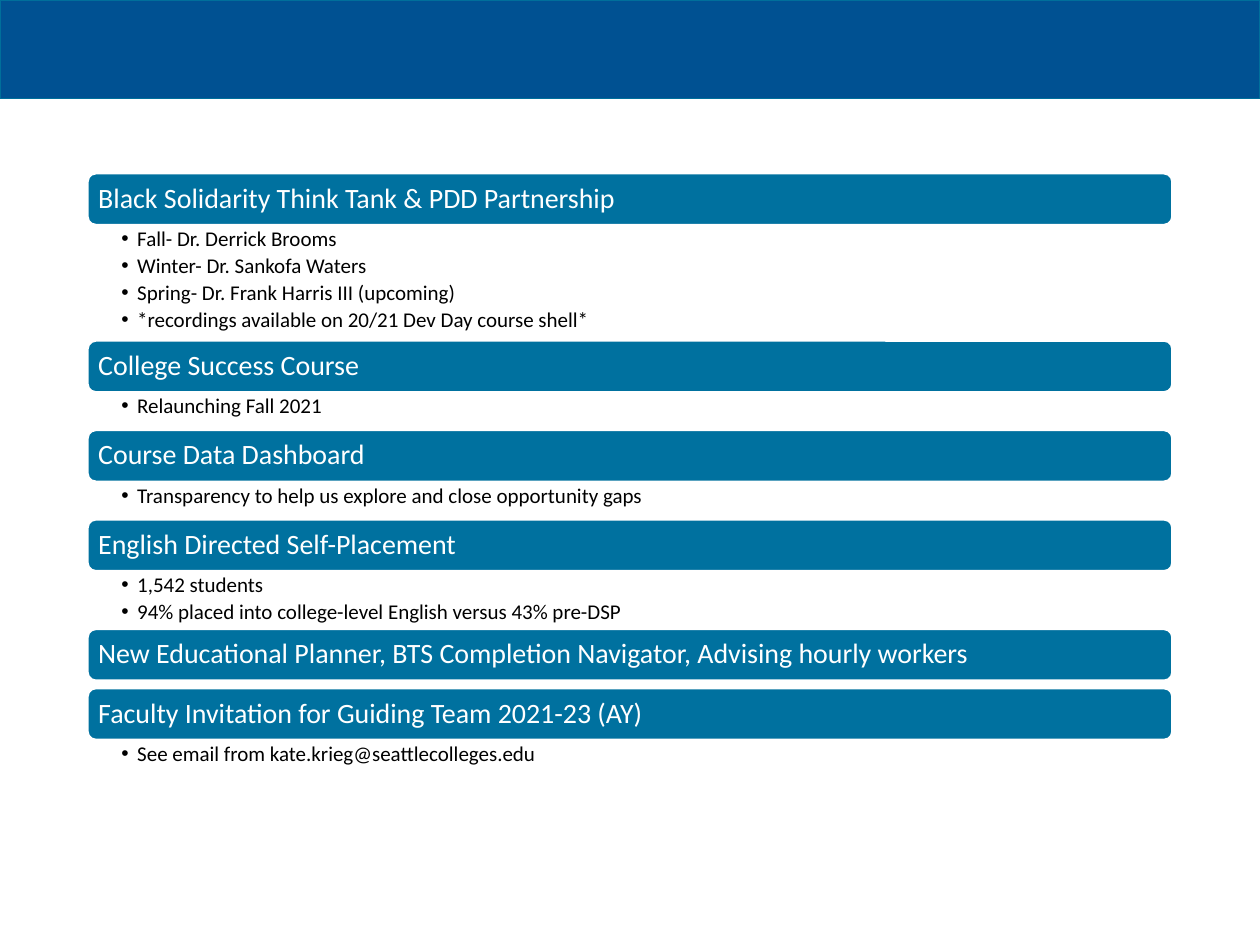
"""Build a slide of college initiatives as headed bars with bulleted details."""
from lxml import etree
from pptx import Presentation
from pptx.dml.color import RGBColor
from pptx.enum.shapes import MSO_SHAPE
from pptx.enum.text import MSO_ANCHOR, PP_ALIGN
from pptx.oxml.ns import qn
from pptx.util import Pt

RECTANGLE = MSO_SHAPE.RECTANGLE
ROUNDED_RECTANGLE = MSO_SHAPE.ROUNDED_RECTANGLE
MIDDLE = MSO_ANCHOR.MIDDLE
TOP = MSO_ANCHOR.TOP
LEFT = PP_ALIGN.LEFT

BANNER_BLUE = RGBColor(0x00, 0x51, 0x92)
BANNER_EDGE = RGBColor(0x00, 0x6F, 0x9B)
BAR_BLUE = RGBColor(0x00, 0x71, 0x9F)
WHITE = RGBColor(0xFF, 0xFF, 0xFF)
BLACK = RGBColor(0x00, 0x00, 0x00)

SLIDE_WIDTH, SLIDE_HEIGHT = 720, 540
BANNER_HEIGHT = 56.2
CONTENT_LEFT, CONTENT_WIDTH = 49.7, 620.6
CONTENT_TOP = 98.7
BAR_HEIGHT = 30.2
BAR_GAP = 3.6
BULLET_INDENT = 9
DETAIL_HEIGHTS = {1: 20.9, 2: 32.4, 4: 65.4}

BAR_FRAME = {"margin_left": Pt(5), "margin_right": Pt(5), "margin_top": Pt(5),
             "margin_bottom": Pt(5), "vertical_anchor": MIDDLE, "word_wrap": True}
DETAIL_FRAME = {"margin_left": Pt(19.7), "margin_right": Pt(8.5), "margin_top": Pt(1.6),
                "margin_bottom": Pt(1.6), "vertical_anchor": TOP, "word_wrap": True}
BAR_PARAGRAPH = {"alignment": LEFT, "line_spacing": 0.9}
DETAIL_PARAGRAPH = {"alignment": LEFT, "line_spacing": 0.9, "space_after": Pt(2.4), "level": 1}
BAR_FONT = {"name": "Calibri", "size": Pt(16)}
DETAIL_FONT = {"name": "Calibri", "size": Pt(12)}

SECTIONS = [
    ("Black Solidarity Think Tank & PDD Partnership",
     ["Fall- Dr. Derrick Brooms",
      "Winter- Dr. Sankofa Waters",
      "Spring- Dr. Frank Harris III (upcoming)",
      "*recordings available on 20/21 Dev Day course shell*"]),
    ("College Success Course", ["Relaunching Fall 2021"]),
    ("Course Data Dashboard",
     ["Transparency to help us explore and close opportunity gaps"]),
    ("English Directed Self-Placement",
     ["1,542 students",
      "94% placed into college-level English versus 43% pre-DSP"]),
    ("New Educational Planner, BTS Completion Navigator, Advising hourly workers", []),
    ("Faculty Invitation for Guiding Team 2021-23 (AY)",
     ["See email from kate.krieg@seattlecolleges.edu"]),
]


def apply_format(target, values):
    """Set each attribute named in values on the target."""
    for name, value in values.items():
        setattr(target, name, value)


def add_box(slide, kind, left, top, width, height, fill, line, line_width):
    """Add a filled, outlined shape without a shadow."""
    shape = slide.shapes.add_shape(kind, Pt(left), Pt(top), Pt(width), Pt(height))
    shape.shadow.inherit = False
    shape.fill.solid()
    shape.fill.fore_color.rgb = fill
    shape.line.color.rgb = line
    shape.line.width = Pt(line_width)
    return shape


def write_paragraph(paragraph, text, paragraph_format, font_format, color):
    """Fill a paragraph with formatted text."""
    paragraph.text = text
    apply_format(paragraph, paragraph_format)
    apply_format(paragraph.font, font_format)
    paragraph.font.color.rgb = color


def add_bullet(paragraph):
    """Give a paragraph a hanging round bullet."""
    properties = paragraph._p.get_or_add_pPr()
    properties.set("marL", str(Pt(BULLET_INDENT)))
    properties.set("indent", str(-Pt(BULLET_INDENT)))
    etree.SubElement(properties, qn("a:buFont"), typeface="Arial")
    etree.SubElement(properties, qn("a:buChar"), char="•")


def add_bar(slide, top, title):
    """Add a rounded bar that carries a section title."""
    bar = add_box(slide, ROUNDED_RECTANGLE, CONTENT_LEFT, top, CONTENT_WIDTH, BAR_HEIGHT,
                  BAR_BLUE, WHITE, 2)
    apply_format(bar.text_frame, BAR_FRAME)
    write_paragraph(bar.text_frame.paragraphs[0], title, BAR_PARAGRAPH, BAR_FONT, WHITE)


def add_details(slide, top, height, details):
    """Add the bulleted details below a bar."""
    box = slide.shapes.add_textbox(Pt(CONTENT_LEFT), Pt(top), Pt(CONTENT_WIDTH), Pt(height))
    frame = box.text_frame
    apply_format(frame, DETAIL_FRAME)
    for index, detail in enumerate(details):
        paragraph = frame.add_paragraph() if index else frame.paragraphs[0]
        add_bullet(paragraph)
        write_paragraph(paragraph, detail, DETAIL_PARAGRAPH, DETAIL_FONT, BLACK)


def main():
    """Build and save the presentation."""
    presentation = Presentation()
    presentation.slide_width = Pt(SLIDE_WIDTH)
    presentation.slide_height = Pt(SLIDE_HEIGHT)
    slide = presentation.slides.add_slide(presentation.slide_layouts[6])
    add_box(slide, RECTANGLE, 0, 0, SLIDE_WIDTH, BANNER_HEIGHT, BANNER_BLUE, BANNER_EDGE, 0.75)
    top = CONTENT_TOP
    for title, details in SECTIONS:
        add_bar(slide, top, title)
        top += BAR_HEIGHT
        if details:
            height = DETAIL_HEIGHTS[len(details)]
            add_details(slide, top, height, details)
            top += height
        else:
            top += BAR_GAP
    presentation.save("out.pptx")


if __name__ == "__main__":
    main()
